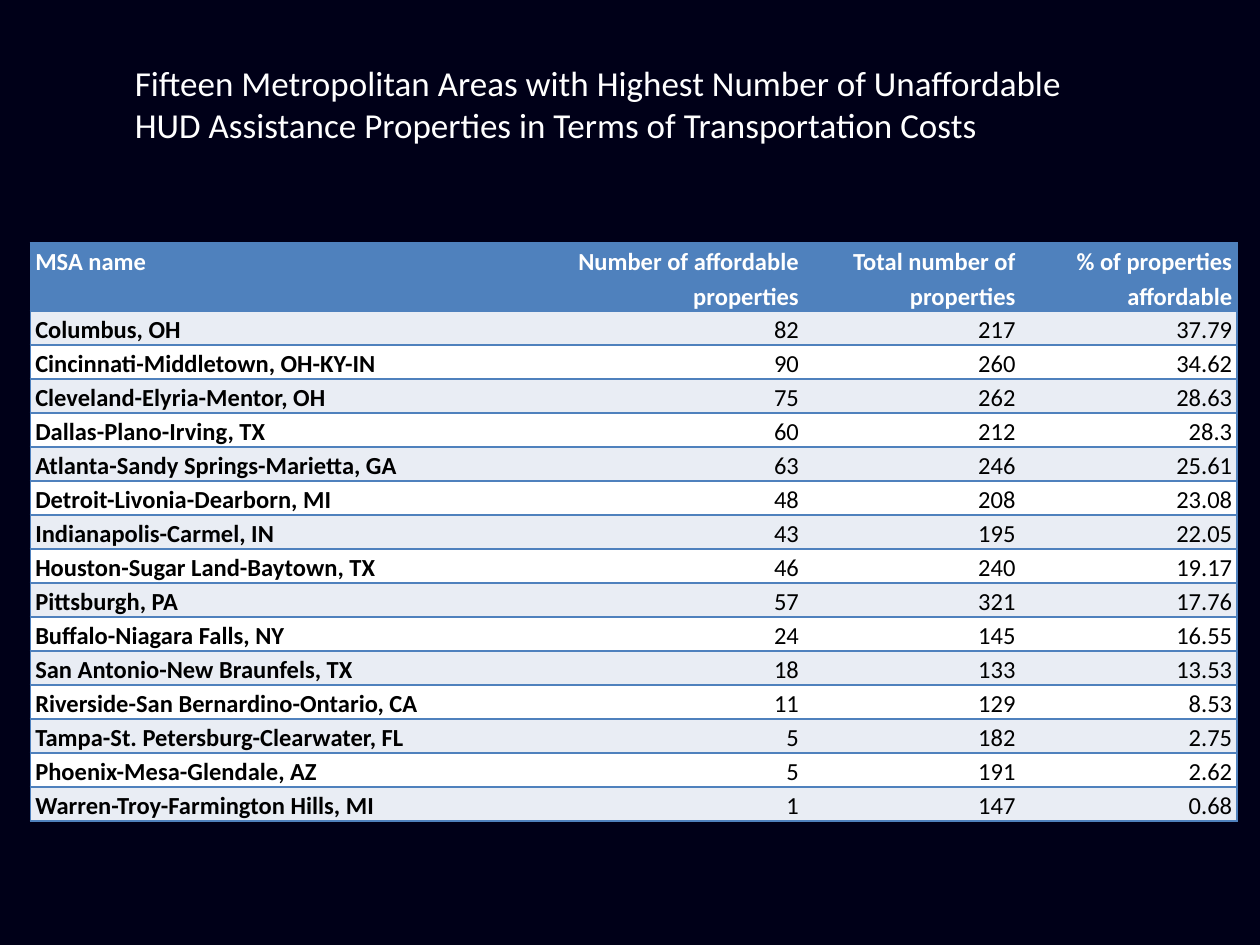
from lxml import etree
from pptx import Presentation
from pptx.dml.color import RGBColor
from pptx.enum import text
from pptx.oxml import ns
from pptx.util import Inches, Pt

TITLE = ("Fifteen Metropolitan Areas with Highest Number of Unaffordable "
         "HUD Assistance Properties in Terms of Transportation Costs")
HEADER = ("MSA name", "Number of affordable properties",
          "Total number of properties", "% of properties affordable")
AREAS = [
    ("Columbus, OH", 82, 217, 37.79),
    ("Cincinnati-Middletown, OH-KY-IN", 90, 260, 34.62),
    ("Cleveland-Elyria-Mentor, OH", 75, 262, 28.63),
    ("Dallas-Plano-Irving, TX", 60, 212, 28.3),
    ("Atlanta-Sandy Springs-Marietta, GA", 63, 246, 25.61),
    ("Detroit-Livonia-Dearborn, MI", 48, 208, 23.08),
    ("Indianapolis-Carmel, IN", 43, 195, 22.05),
    ("Houston-Sugar Land-Baytown, TX", 46, 240, 19.17),
    ("Pittsburgh, PA", 57, 321, 17.76),
    ("Buffalo-Niagara Falls, NY", 24, 145, 16.55),
    ("San Antonio-New Braunfels, TX", 18, 133, 13.53),
    ("Riverside-San Bernardino-Ontario, CA", 11, 129, 8.53),
    ("Tampa-St. Petersburg-Clearwater, FL", 5, 182, 2.75),
    ("Phoenix-Mesa-Glendale, AZ", 5, 191, 2.62),
    ("Warren-Troy-Farmington Hills, MI", 1, 147, 0.68),
]
COLUMN_WIDTHS = (4.14, 2, 1.72, 1.72)
ROW_HEIGHT = 0.27
NAVY, BLUE, PALE, WHITE, BLACK = "000018", "4F81BD", "E9EDF4", "FFFFFF", "000000"


def set_fill(fill, color):
    fill.solid()
    fill.fore_color.rgb = RGBColor.from_string(color)


def set_font(paragraph, size, color, bold=False):
    font = paragraph.font
    font.name, font.size, font.bold = "Calibri", Pt(size), bold
    font.color.rgb = RGBColor.from_string(color)


def set_borders(cell, sides):
    """Draw 1 pt blue lines on the given sides and none on the others."""
    properties = cell._tc.get_or_add_tcPr()
    for position, side in enumerate("LRTB"):
        line = etree.Element(ns.qn(f"a:ln{side}"), w=str(Pt(1)))
        if side in sides:
            fill = etree.SubElement(line, ns.qn("a:solidFill"))
            etree.SubElement(fill, ns.qn("a:srgbClr"), val=BLUE)
        else:
            etree.SubElement(line, ns.qn("a:noFill"))
        properties.insert(position, line)


def add_title(slide):
    title = slide.shapes.title
    title.left, title.top = Inches(0.97), Inches(0.44)
    title.width, title.height = Inches(7.98), Inches(0.77)
    frame = title.text_frame
    frame.text = TITLE
    frame.word_wrap = True
    frame.auto_size = text.MSO_AUTO_SIZE.SHAPE_TO_FIT_TEXT
    frame.vertical_anchor = text.MSO_ANCHOR.TOP
    paragraph = frame.paragraphs[0]
    paragraph.alignment = text.PP_ALIGN.LEFT
    set_font(paragraph, 20, WHITE)


def fill_cell(cell, value, row, column):
    is_header, is_name = row == 0, column == 0
    cell.margin_left = cell.margin_right = Inches(0.04)
    cell.margin_top = cell.margin_bottom = 0
    set_fill(cell.fill, BLUE if is_header else PALE if row % 2 else WHITE)
    edges = {0: "L", len(HEADER) - 1: "R"}
    set_borders(cell, "TB" + edges.get(column, ""))
    cell.text = str(value)
    paragraph = cell.text_frame.paragraphs[0]
    paragraph.line_spacing = 1.15
    paragraph.alignment = text.PP_ALIGN.LEFT if is_name else text.PP_ALIGN.RIGHT
    set_font(paragraph, 14, WHITE if is_header else BLACK, is_header or is_name)


def add_area_table(slide):
    rows = [HEADER] + AREAS
    heights = [2 * ROW_HEIGHT] + [ROW_HEIGHT] * len(AREAS)
    table = slide.shapes.add_table(
        len(rows), len(HEADER), Inches(0.24), Inches(1.93),
        Inches(sum(COLUMN_WIDTHS)), Inches(sum(heights))).table
    for column, width in zip(table.columns, COLUMN_WIDTHS):
        column.width = Inches(width)
    for row, (values, height) in enumerate(zip(rows, heights)):
        table.rows[row].height = Inches(height)
        for column, value in enumerate(values):
            fill_cell(table.cell(row, column), value, row, column)


def main():
    presentation = Presentation()
    presentation.slide_width, presentation.slide_height = Inches(10), Inches(7.5)
    slide = presentation.slides.add_slide(presentation.slide_layouts[5])
    set_fill(slide.background.fill, NAVY)
    add_title(slide)
    add_area_table(slide)
    presentation.save("out.pptx")


if __name__ == "__main__":
    main()
